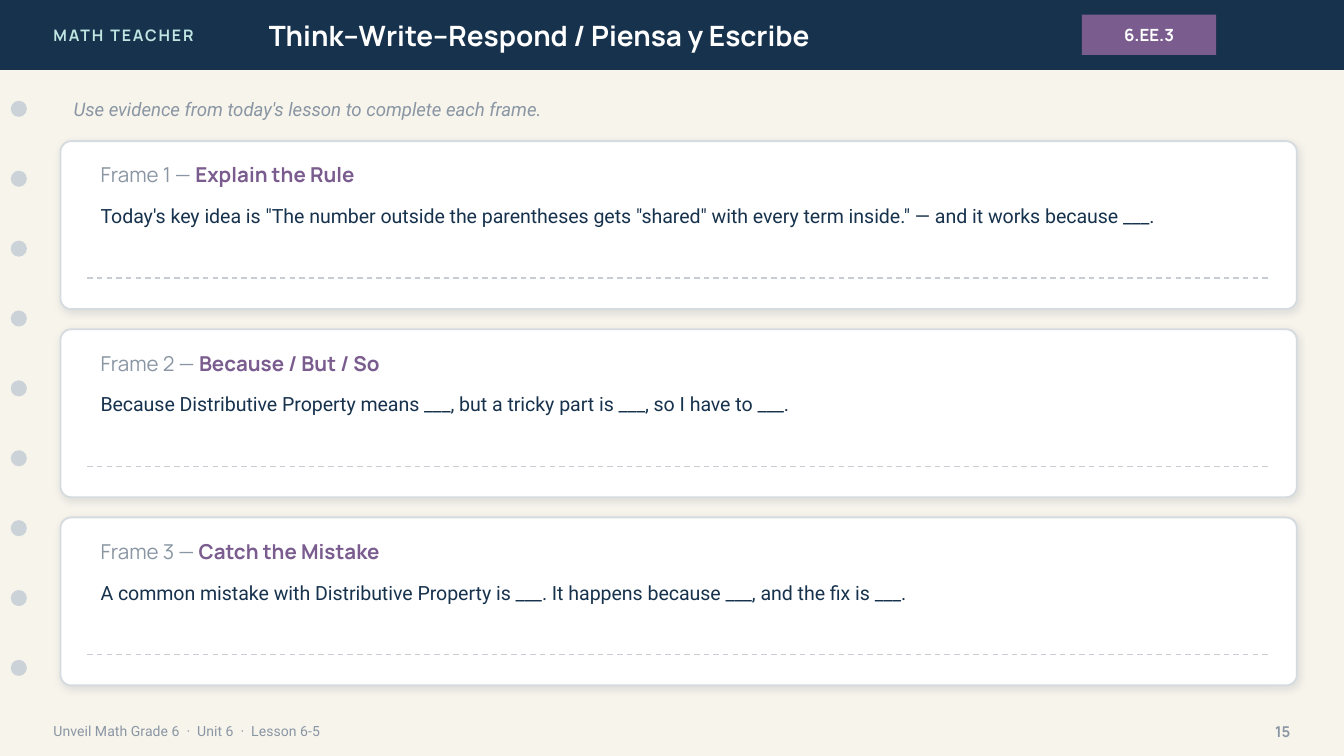
from lxml import etree
from pptx import Presentation
from pptx.dml.color import RGBColor
from pptx.enum.dml import MSO_LINE
from pptx.enum.shapes import MSO_CONNECTOR, MSO_SHAPE
from pptx.enum.text import MSO_ANCHOR, MSO_AUTO_SIZE, PP_ALIGN
from pptx.oxml import parse_xml
from pptx.oxml.ns import nsdecls, qn
from pptx.util import Pt

RECT, OVAL, ROUNDED = MSO_SHAPE.RECTANGLE, MSO_SHAPE.OVAL, MSO_SHAPE.ROUNDED_RECTANGLE
STRAIGHT, DASH = MSO_CONNECTOR.STRAIGHT, MSO_LINE.DASH
TOP, MIDDLE = MSO_ANCHOR.TOP, MSO_ANCHOR.MIDDLE
LEFT, CENTER, RIGHT = PP_ALIGN.LEFT, PP_ALIGN.CENTER, PP_ALIGN.RIGHT
HEAD, BODY = "Manrope", "Roboto"

NAVY = RGBColor(0x17, 0x32, 0x4D)
PURPLE = RGBColor(0x7A, 0x5C, 0x8E)
MINT = RGBColor(0xBF, 0xE6, 0xE2)
CREAM = RGBColor(0xF7, 0xF4, 0xEC)
WHITE = RGBColor(0xFF, 0xFF, 0xFF)
GRAY = RGBColor(0x8A, 0x96, 0xA3)
DOT = RGBColor(0xCB, 0xD3, 0xD9)
BORDER = RGBColor(0xD6, 0xDB, 0xDF)
RULE = RGBColor(0xC7, 0xCD, 0xD2)

# Content
TEACHER = "MATH TEACHER"
TITLE = "Think–Write–Respond / Piensa y Escribe"
STANDARD = "6.EE.3"
PROMPT = "Use evidence from today's lesson to complete each frame."
FRAMES = [
    ("Explain the Rule",
     "Today's key idea is \"The number outside the parentheses gets \"shared\" "
     "with every term inside.\" — and it works because ___."),
    ("Because / But / So",
     "Because Distributive Property means ___, but a tricky part is ___, so I have to ___."),
    ("Catch the Mistake",
     "A common mistake with Distributive Property is ___. It happens because ___, "
     "and the fix is ___."),
]
FOOTER = "  ·  ".join(["Unveil Math Grade 6", "Unit 6", "Lesson 6-5"])
PAGE = "15"

# Layout, in points
BAR_H = 37.44
DOTS, DOT_SIZE, DOT_X, DOT_Y = 9, 8.64, 5.76, 54
CARD_X, CARD_Y, CARD_W, CARD_H, CARD_GAP = 32.4, 75.6, 662.4, 90, 10.8
PAD = 14.4
FOOT_Y, FOOT_H = 381.6, 20.16

CARD_SHADOW = (
    f'<a:effectLst {nsdecls("a")}><a:outerShdw blurRad="50800" dist="12700" dir="5400000" '
    'algn="bl" rotWithShape="0"><a:srgbClr val="1C2E42"><a:alpha val="10000"/></a:srgbClr>'
    '</a:outerShdw></a:effectLst>')


def add_box(s, kind, x, y, w, h, fill):
    sp = s.shapes.add_shape(kind, Pt(x), Pt(y), Pt(w), Pt(h))
    sp.shadow.inherit = False
    sp.fill.solid()
    sp.fill.fore_color.rgb = fill
    sp.line.fill.background()
    return sp


def write(sp, runs, size, font, color, bold=None, italic=None, align=LEFT, anchor=MIDDLE):
    tf = sp.text_frame
    tf.word_wrap = True
    tf.auto_size = MSO_AUTO_SIZE.NONE
    tf.vertical_anchor = anchor
    p = tf.paragraphs[0]
    p.alignment = align
    for text in runs:
        p.add_run().text = text
    f = p.font
    f.size, f.name, f.bold, f.italic = Pt(size), font, bold, italic
    f.color.rgb = color
    return p


def add_text(s, x, y, w, h, runs, *style, **options):
    sp = s.shapes.add_textbox(Pt(x), Pt(y), Pt(w), Pt(h))
    return write(sp, runs, *style, **options)


def add_card(s, number, name, sentence, y):
    card = add_box(s, ROUNDED, CARD_X, y, CARD_W, CARD_H, WHITE)
    card.adjustments[0] = 0.064
    card.line.color.rgb = BORDER
    card.line.width = Pt(1)
    sp_pr = card.element.spPr
    sp_pr.replace(sp_pr.find(qn("a:effectLst")), parse_xml(CARD_SHADOW))

    x, w = CARD_X + PAD, CARD_W - 2 * PAD
    p = add_text(s, x, y + 7.2, w, 21.6, [f"Frame {number} — ", name], 11, HEAD, GRAY)
    p.runs[1].font.bold = True
    p.runs[1].font.color.rgb = PURPLE
    add_text(s, x, y + 30.24, w, 28.8, [sentence], 10.5, BODY, NAVY, anchor=TOP)

    rule_y = Pt(y + 73.44)
    rule = s.shapes.add_connector(STRAIGHT, Pt(x), rule_y, Pt(x + w), rule_y)
    rule.line.color.rgb = RULE
    rule.line.width = Pt(0.75)
    rule.line.dash_style = DASH
    etree.SubElement(rule.element.spPr, qn("a:effectLst"))


def main():
    prs = Presentation()
    prs.slide_width, prs.slide_height = Pt(720), Pt(405)
    s = prs.slides.add_slide(prs.slide_layouts[5])
    s.background.fill.solid()
    s.background.fill.fore_color.rgb = CREAM

    # Header bar, with the title brought in front of it
    bar = add_box(s, RECT, 0, 0, 720, BAR_H, NAVY)
    title = s.shapes.title
    title.left, title.top, title.width, title.height = Pt(136.8), Pt(0), Pt(403.2), Pt(BAR_H)
    write(title, [TITLE], 15, HEAD, WHITE, bold=True)
    bar.element.addnext(title.element)
    p = add_text(s, 21.6, 0, 172.8, BAR_H, [TEACHER], 8.5, HEAD, MINT, bold=True)
    p.runs[0].font._element.set("spc", "100")
    badge = add_box(s, RECT, 579.6, 7.92, 72, 21.6, PURPLE)
    write(badge, [STANDARD], 9, HEAD, WHITE, bold=True, align=CENTER)

    # Binder holes, one bar height apart
    for i in range(DOTS):
        add_box(s, OVAL, DOT_X, DOT_Y + i * BAR_H, DOT_SIZE, DOT_SIZE, DOT)

    # Prompt and sentence frames
    add_text(s, CARD_X, 47.52, CARD_W, 21.6, [PROMPT], 10, BODY, GRAY, italic=True)
    for i, (name, sentence) in enumerate(FRAMES):
        add_card(s, i + 1, name, sentence, CARD_Y + i * (CARD_H + CARD_GAP))

    # Footer
    add_text(s, 21.6, FOOT_Y, 504, FOOT_H, [FOOTER], 7.5, BODY, GRAY)
    add_text(s, 662.4, FOOT_Y, 36, FOOT_H, [PAGE], 8, HEAD, GRAY, bold=True, align=RIGHT)

    prs.save("out.pptx")


if __name__ == "__main__":
    main()
